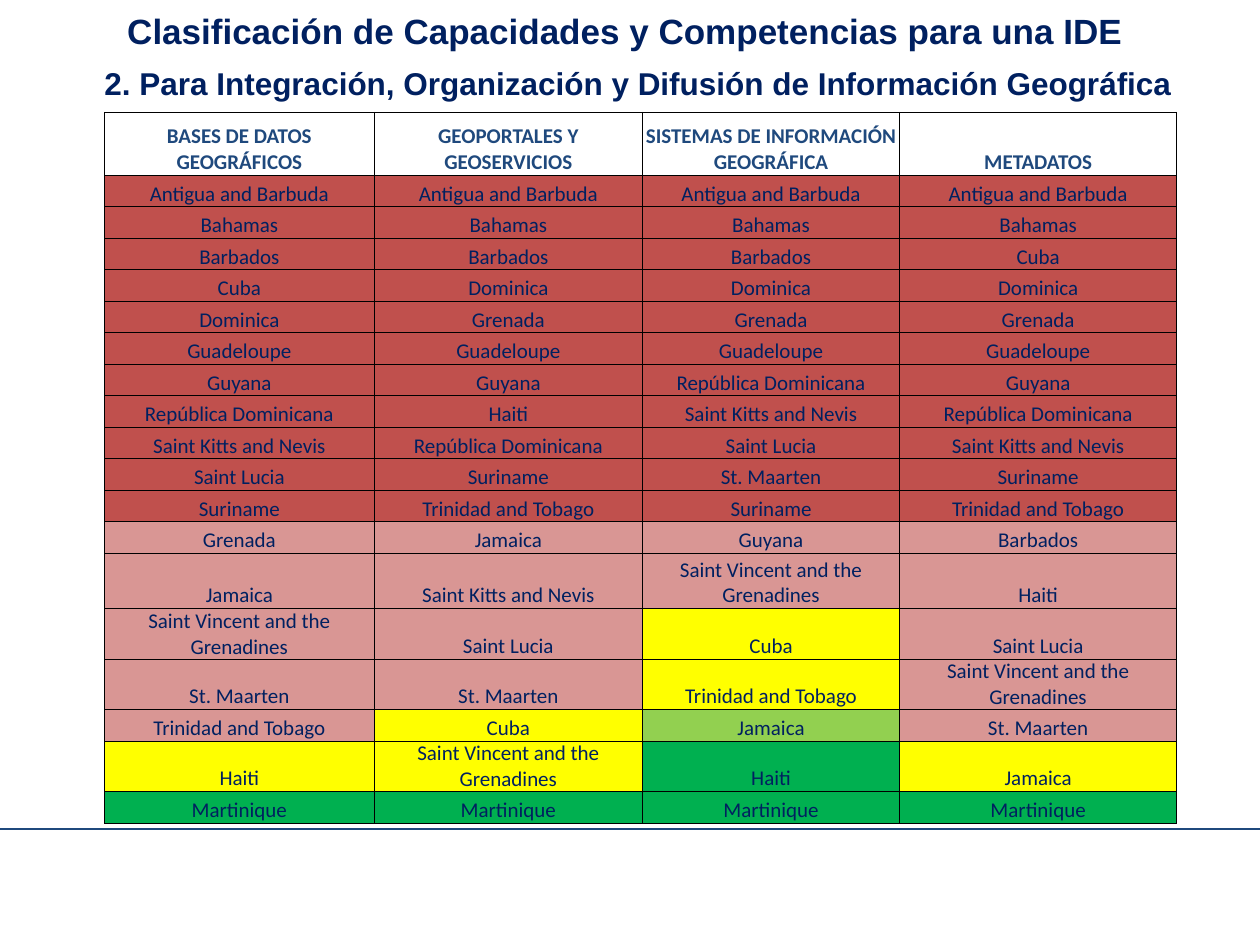
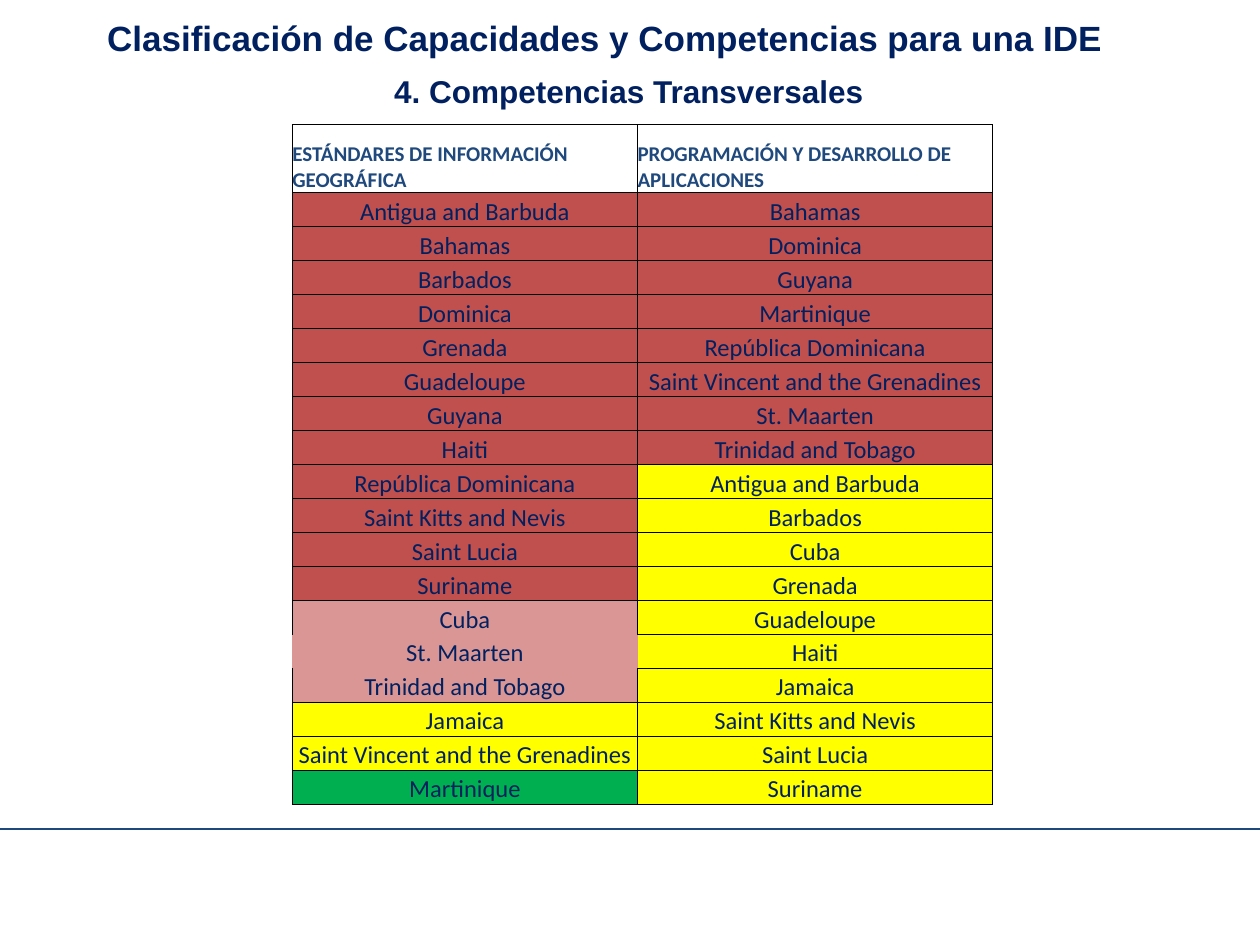
from lxml.etree import SubElement as Sub
from pptx import Presentation
from pptx.dml.color import RGBColor as Rgb
from pptx.enum.shapes import MSO_CONNECTOR as Link
from pptx.enum.text import MSO_ANCHOR as Anchor, MSO_AUTO_SIZE as Fit, PP_ALIGN as Align
from pptx.oxml.ns import qn
from pptx.util import Inches, Pt

NAVY = Rgb(0x00, 0x20, 0x60)
BLUE = Rgb(0x1F, 0x49, 0x7D)
BLACK = Rgb(0x00, 0x00, 0x00)
WHITE = Rgb(0xFF, 0xFF, 0xFF)
RED = Rgb(0xC0, 0x50, 0x4D)
PINK = Rgb(0xD9, 0x96, 0x94)
YELLOW = Rgb(0xFF, 0xFF, 0x00)
LIME = Rgb(0x92, 0xD0, 0x50)
GREEN = Rgb(0x00, 0xB0, 0x50)

TITLE = "Clasificación de Capacidades y Competencias para una IDE"

DATA = [
    ("BASES DE DATOS GEOGRÁFICOS", [
        (RED, "Antigua and Barbuda, Bahamas, Barbados, Cuba, Dominica, Guadeloupe, Guyana, "
              "República Dominicana, Saint Kitts and Nevis, Saint Lucia, Suriname"),
        (PINK, "Grenada, Jamaica, Saint Vincent and the Grenadines, St. Maarten, "
               "Trinidad and Tobago"),
        (YELLOW, "Haiti"),
        (GREEN, "Martinique")]),
    ("GEOPORTALES Y GEOSERVICIOS", [
        (RED, "Antigua and Barbuda, Bahamas, Barbados, Dominica, Grenada, Guadeloupe, Guyana, "
              "Haiti, República Dominicana, Suriname, Trinidad and Tobago"),
        (PINK, "Jamaica, Saint Kitts and Nevis, Saint Lucia, St. Maarten"),
        (YELLOW, "Cuba, Saint Vincent and the Grenadines"),
        (GREEN, "Martinique")]),
    ("SISTEMAS DE INFORMACIÓN GEOGRÁFICA", [
        (RED, "Antigua and Barbuda, Bahamas, Barbados, Dominica, Grenada, Guadeloupe, "
              "República Dominicana, Saint Kitts and Nevis, Saint Lucia, St. Maarten, Suriname"),
        (PINK, "Guyana, Saint Vincent and the Grenadines"),
        (YELLOW, "Cuba, Trinidad and Tobago"),
        (LIME, "Jamaica"),
        (GREEN, "Haiti, Martinique")]),
    ("METADATOS", [
        (RED, "Antigua and Barbuda, Bahamas, Cuba, Dominica, Grenada, Guadeloupe, Guyana, "
              "República Dominicana, Saint Kitts and Nevis, Suriname, Trinidad and Tobago"),
        (PINK, "Barbados, Haiti, Saint Lucia, Saint Vincent and the Grenadines, St. Maarten"),
        (YELLOW, "Jamaica"),
        (GREEN, "Martinique")]),
]

SKILLS = [
    ("ESTÁNDARES DE INFORMACIÓN GEOGRÁFICA", [
        (RED, "Antigua and Barbuda, Bahamas, Barbados, Dominica, Grenada, Guadeloupe, Guyana, "
              "Haiti, República Dominicana, Saint Kitts and Nevis, Saint Lucia, Suriname"),
        (PINK, "Cuba, St. Maarten, Trinidad and Tobago"),
        (YELLOW, "Jamaica, Saint Vincent and the Grenadines"),
        (GREEN, "Martinique")]),
    ("PROGRAMACIÓN Y DESARROLLO DE APLICACIONES", [
        (RED, "Bahamas, Dominica, Guyana, Martinique, República Dominicana, "
              "Saint Vincent and the Grenadines, St. Maarten, Trinidad and Tobago"),
        (YELLOW, "Antigua and Barbuda, Barbados, Cuba, Grenada, Guadeloupe, Haiti, Jamaica, "
                 "Saint Kitts and Nevis, Saint Lucia, Suriname")]),
]


def put(frame, text, size=12, font="Calibri", color=NAVY, bold=False,
        align=Align.LEFT, space=None, after=None):
    par = frame.paragraphs[0]
    par.alignment = align
    if space:
        par.line_spacing = space
    if after:
        par.space_after = Pt(after)
    run = par.add_run()
    run.text = text
    face = run.font
    face.size, face.name, face.bold = Pt(size), font, bold
    face.color.rgb = color


class Deck:
    head = dict(font="Arial", bold=True)

    def __init__(self):
        self.prs = Presentation()
        self.prs.slide_width, self.prs.slide_height = Inches(10), Inches(7.5)

    def start(self, left, top):
        self.slide = self.prs.slides.add_slide(self.prs.slide_layouts[5])
        self.rule()
        box = self.slide.shapes.title
        self.place(box, left, top, 8.5, 0.46)
        put(box.text_frame, TITLE, size=20, align=Align.JUSTIFY, space=1.07, after=8, **self.head)

    def place(self, box, left, top, width, height):
        box.left, box.top = Inches(left), Inches(top)
        box.width, box.height = Inches(width), Inches(height)
        frame = box.text_frame
        frame.word_wrap = True
        frame.auto_size = Fit.SHAPE_TO_FIT_TEXT
        frame.vertical_anchor = Anchor.TOP

    def rule(self):
        y = Inches(6.58)
        line = self.slide.shapes.add_connector(Link.STRAIGHT, 0, y, Inches(10), y)
        line.line.color.rgb = BLUE
        line.line.width = Pt(0.75)
        Sub(line._element.spPr, qn("a:effectLst"))

    def lead(self, text, left, top, width):
        box = self.slide.shapes.add_textbox(0, 0, 0, 0)
        self.place(box, left, top, width, 0.4)
        put(box.text_frame, text, size=18, **self.head)

    def edge(self, cell, sides):
        props = cell._tc.get_or_add_tcPr()
        for side in "LRTB":
            line = Sub(props, qn("a:ln" + side), w=str(Pt(0.5)))
            if side in sides:
                fill = Sub(line, qn("a:solidFill"))
                Sub(fill, qn("a:srgbClr"), val=str(BLACK))
            else:
                Sub(line, qn("a:noFill"))

    def cell(self, cell, text, fill, sides, **fmt):
        self.edge(cell, sides)
        cell.fill.solid()
        cell.fill.fore_color.rgb = fill
        cell.margin_left = cell.margin_right = cell.margin_top = cell.margin_bottom = 0
        cell.vertical_anchor = Anchor.BOTTOM
        put(cell.text_frame, text, **fmt)

    def table(self, data, left, top, widths, heights, size=12, align=Align.CENTER, gaps={}):
        shape = self.slide.shapes.add_table(
            len(heights), len(widths), Inches(left), Inches(top),
            Inches(sum(widths)), Inches(sum(heights)))
        grid = shape.table
        grid.first_row = grid.horz_banding = False
        for col, width in zip(grid.columns, widths):
            col.width = Inches(width)
        for row, height in zip(grid.rows, heights):
            row.height = Inches(height)
        for c, (head, groups) in enumerate(data):
            self.cell(grid.cell(0, c), head, WHITE, "LRTB", color=BLUE, bold=True, align=align)
            lands = [(land, fill) for fill, names in groups for land in names.split(", ")]
            for r, (land, fill) in enumerate(lands, 1):
                self.cell(grid.cell(r, c), land, fill, gaps.get((r, c), "LRTB"),
                          size=size, align=Align.CENTER)


def main():
    deck = Deck()

    deck.start(0.91, 0)
    tall = {0: 0.5, 13: 0.44, 14: 0.39, 15: 0.39, 17: 0.39}
    deck.table(DATA, 0.83, 0.89, [2.14, 2.13, 2.04, 2.2],
               [tall.get(r, 0.25) for r in range(19)])
    deck.lead("2. Para Integración, Organización y Difusión de Información Geográfica",
              0.73, 0.46, 9.27)

    deck.start(0.75, 0.06)
    deck.table(SKILLS, 2.32, 0.99, [2.74, 2.82], [0.54] + [0.27] * 18,
               size=14, align=Align.LEFT,
               gaps={(13, 0): "LRT", (14, 0): "", (14, 1): "RTB", (15, 0): "LRB"})
    deck.lead("4. Competencias Transversales", 3.03, 0.52, 5.28)

    deck.prs.save("out.pptx")


if __name__ == "__main__":
    main()
